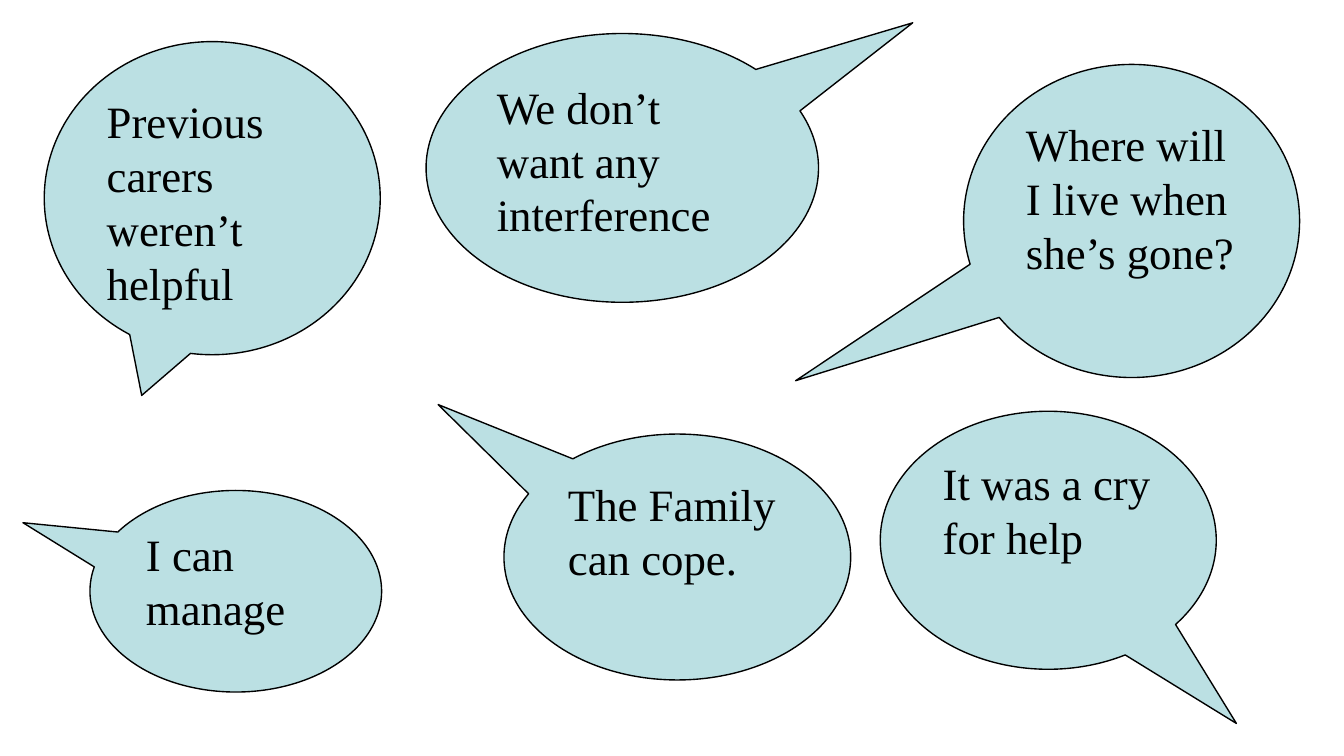
import pptx
import pptx.util
import pptx.dml.color
import pptx.enum.shapes
import pptx.enum.text

Inches = pptx.util.Inches


def rgb(value):
    return pptx.dml.color.RGBColor.from_string(value)


class SlideBuilder:
    fill = "BBE0E3"
    line = "000000"
    line_width = pptx.util.Pt(0.75)
    font = {"name": "Times New Roman", "size": pptx.util.Pt(24)}
    frame = {"word_wrap": True, "vertical_anchor": pptx.enum.text.MSO_ANCHOR.TOP}

    def __init__(self, s):
        self.s = s

    def apply(self, target, values):
        for name, value in values.items():
            setattr(target, name, value)

    def callout(self, text, box, tail):
        sp = self.s.shapes.add_shape(
            pptx.enum.shapes.MSO_SHAPE.OVAL_CALLOUT, *map(Inches, box))
        sp.shadow.inherit = False
        for i, value in enumerate(tail):
            sp.adjustments[i] = value
        sp.fill.solid()
        sp.fill.fore_color.rgb = rgb(self.fill)
        sp.line.color.rgb = rgb(self.line)
        sp.line.width = self.line_width
        tf = sp.text_frame
        self.apply(tf, self.frame)
        p = tf.paragraphs[0]
        p.alignment = pptx.enum.text.PP_ALIGN.LEFT
        r = p.add_run()
        r.text = text
        self.apply(r.font, self.font)
        r.font.color.rgb = rgb(self.line)


CALLOUTS = [
    ("Previous carers weren’t helpful", (0.33, 0.31, 2.5, 2.33), (-0.21, 0.63)),
    ("I can manage", (0.67, 3.65, 2.17, 1.5), (-0.73, -0.34)),
    ("We don’t want any interference", (3.17, 0.25, 2.92, 2), (0.74, -0.54)),
    ("The Family can cope.", (3.75, 3.23, 2.58, 1.83), (-0.69, -0.62)),
    ("Where will I live when she’s gone?", (7.17, 0.48, 2.5, 2.33), (-1, 0.51)),
    ("It was a cry for help", (6.55, 3.06, 2.5, 1.92), (0.56, 0.71)),
]


def main():
    prs = pptx.Presentation()
    prs.slide_width = Inches(10)
    prs.slide_height = prs.slide_width * 9 // 16
    builder = SlideBuilder(prs.slides.add_slide(prs.slide_layouts[6]))
    for text, box, tail in CALLOUTS:
        builder.callout(text, box, tail)
    prs.save("out.pptx")


if __name__ == "__main__":
    main()
